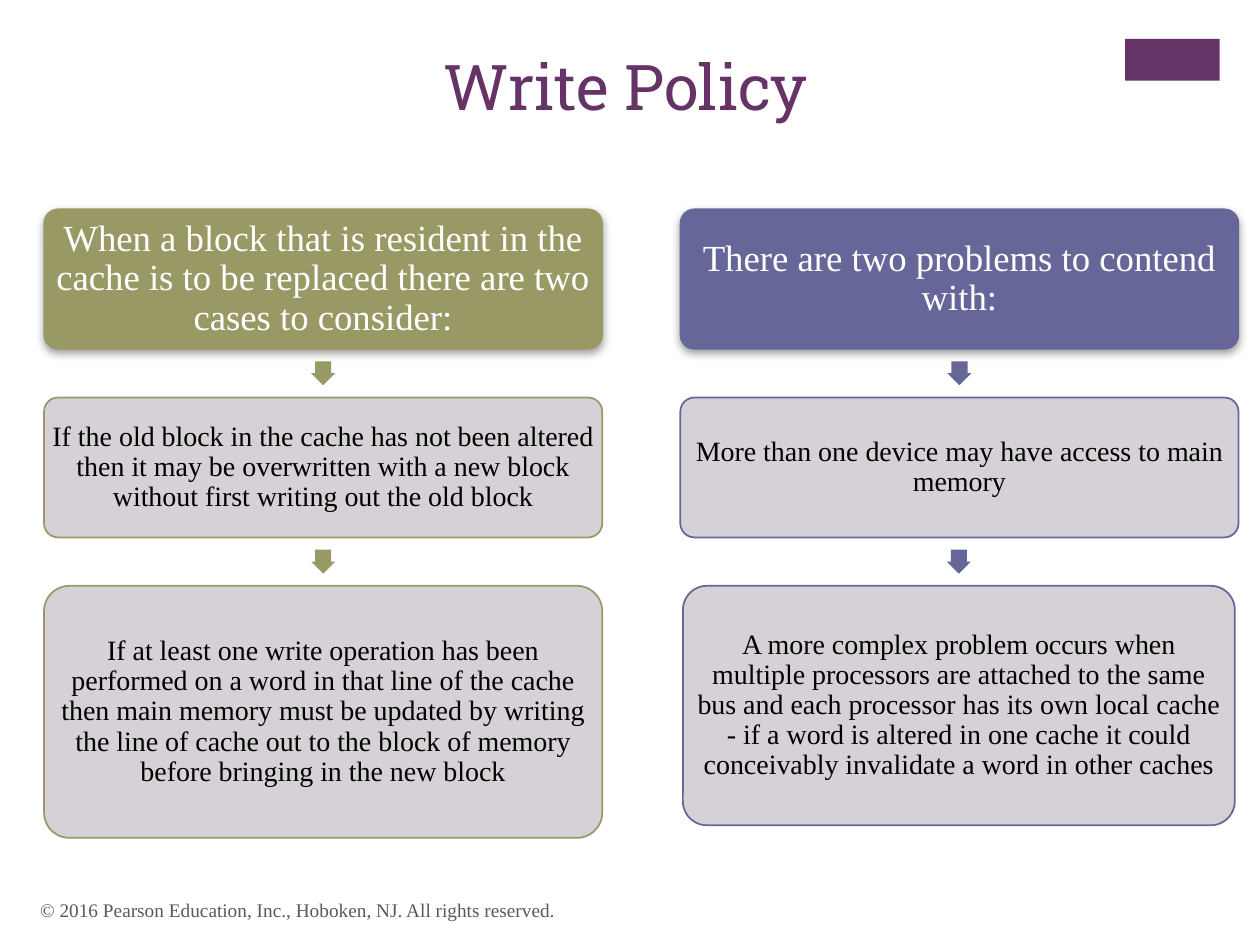
from lxml.etree import SubElement
from pptx import Presentation
from pptx.dml.color import RGBColor
from pptx.enum.shapes import MSO_SHAPE
from pptx.enum.text import MSO_ANCHOR, PP_ALIGN
from pptx.oxml.ns import qn
from pptx.util import Inches, Pt

# Content: each step is (text, left, width, height)
TITLE = "Write Policy"
FOOTER = "© 2016 Pearson Education, Inc., Hoboken, NJ. All rights reserved."
COLUMNS = [
    ("olive", [
        ("When a block that is resident in the cache is to be replaced there are "
         "two cases to consider:", 0.35, 4.43, 1.11),
        ("If the old block in the cache has not been altered then it may be "
         "overwritten with a new block without first writing out the old block",
         0.35, 4.43, 1.11),
        ("If at least one write operation has been performed on a word in that "
         "line of the cache then main memory must be updated by writing the line "
         "of cache out to the block of memory before bringing in the new block",
         0.35, 4.43, 2),
    ]),
    ("violet", [
        ("There are two problems to contend with:", 5.4, 4.43, 1.11),
        ("More than one device may have access to main memory", 5.4, 4.43, 1.11),
        ("A more complex problem occurs when multiple processors are attached to "
         "the same bus and each processor has its own local cache - if a word is "
         "altered in one cache it could conceivably invalidate a word in other "
         "caches", 5.42, 4.38, 1.9),
    ]),
]

THEME = {
    "olive": "999966", "violet": "666699", "plum": "663366", "pale": "D2CCD2",
    "white": "FFFFFF", "black": "000000", "gray": "595959", "shadow": "808080",
    "title_font": "Roboto Slab", "body_font": "Times New Roman",
    "title_size": 36, "head_size": 21, "step_size": 16, "footer_size": 11,
}
TOP, GAP, ARROW = 1.66, 0.385, 0.19


def color(name):
    return RGBColor.from_string(THEME[name])


def write_text(shape, text, *, size, ink, font="body_font", align=PP_ALIGN.LEFT,
               anchor=MSO_ANCHOR.MIDDLE, inset=(0.1, 0.05), spacing=None):
    frame = shape.text_frame
    frame.word_wrap = True
    frame.vertical_anchor = anchor
    frame.margin_left = frame.margin_right = Inches(inset[0])
    frame.margin_top = frame.margin_bottom = Inches(inset[1])
    para = frame.paragraphs[0]
    para.alignment = align
    para.line_spacing = spacing
    span = para.add_run()
    span.text = text
    span.font.name = THEME[font]
    span.font.size = Pt(THEME[size])
    span.font.color.rgb = color(ink)


def add_shape(page, kind, bounds, fill, *, line=None, line_width=1):
    shape = page.shapes.add_shape(kind, *map(Inches, bounds))
    shape.shadow.inherit = False
    shape.fill.solid()
    shape.fill.fore_color.rgb = color(fill)
    if line:
        shape.line.color.rgb = color(line)
        shape.line.width = Pt(line_width)
    else:
        shape.line.fill.background()
    return shape


def set_alpha(color_element, percent):
    SubElement(color_element, qn("a:alpha"), val=str(percent * 1000))


def add_drop_shadow(shape):
    effects = shape._element.spPr.find(qn("a:effectLst"))
    shadow = SubElement(effects, qn("a:outerShdw"), blurRad=str(Pt(5)),
                        dist=str(Pt(2)), dir="5400000", rotWithShape="0")
    set_alpha(SubElement(shadow, qn("a:srgbClr"), val=THEME["shadow"]), 75)


def add_step(page, text, bounds, accent, is_head):
    box = add_shape(page, MSO_SHAPE.ROUNDED_RECTANGLE, bounds,
                    accent if is_head else "pale",
                    line=accent, line_width=0.75 if is_head else 1)
    box.adjustments[0] = 0.1
    if is_head:
        add_drop_shadow(box)
    else:
        fill = box._element.spPr.find(qn("a:solidFill"))
        set_alpha(fill[0], 90)
    inset = 0.03 if is_head else 0.02
    write_text(box, text, size="head_size" if is_head else "step_size",
               ink="white" if is_head else "black", align=PP_ALIGN.CENTER,
               inset=(inset, inset), spacing=0.9)


def add_down_arrow(page, center, middle, accent):
    arrow = add_shape(page, MSO_SHAPE.RIGHT_ARROW,
                      (center - ARROW / 2, middle - ARROW / 2, ARROW, ARROW), accent)
    arrow.rotation = 90
    arrow.adjustments[0] = 0.67
    arrow.adjustments[1] = 0.5


def main():
    deck = Presentation()
    deck.slide_width, deck.slide_height = Inches(10), Inches(7.5)
    page = deck.slides.add_slide(deck.slide_layouts[6])

    # Corner block
    add_shape(page, MSO_SHAPE.RECTANGLE, (8.93, 0.31, 0.75, 0.33), "plum")

    # Two columns of steps, an arrow in each gap
    for accent, steps in COLUMNS:
        top = TOP
        for index, (text, left, width, height) in enumerate(steps):
            if index:
                add_down_arrow(page, left + width / 2, top - GAP / 2, accent)
            add_step(page, text, (left, top, width, height), accent, index == 0)
            top += height + GAP

    # Title and footer
    title = page.shapes.add_textbox(*map(Inches, (3.42, 0.33, 3.26, 1.22)))
    write_text(title, TITLE, size="title_size", ink="plum", font="title_font",
               anchor=MSO_ANCHOR.TOP)
    footer = page.shapes.add_textbox(*map(Inches, (0.22, 7.02, 6.7, 0.4)))
    write_text(footer, FOOTER, size="footer_size", ink="gray")

    deck.save("out.pptx")


if __name__ == "__main__":
    main()
